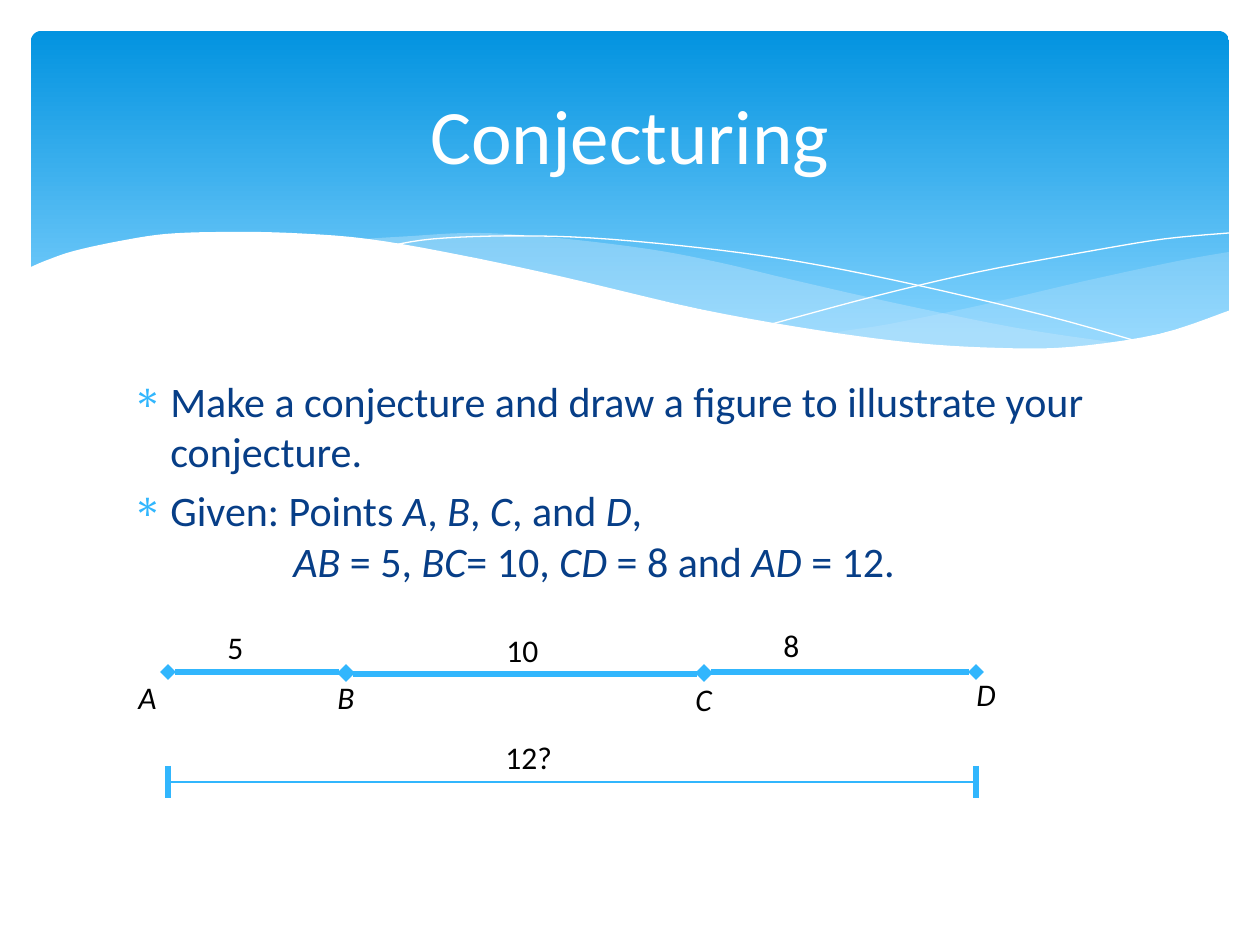
from lxml import etree
from pptx import Presentation
from pptx.dml.color import RGBColor
from pptx.enum.shapes import MSO_CONNECTOR, MSO_SHAPE
from pptx.enum.text import MSO_ANCHOR, PP_ALIGN
from pptx.oxml.ns import qn
from pptx.util import Pt

PX = 914400 / 126
ROUNDED, STRAIGHT = MSO_SHAPE.ROUNDED_RECTANGLE, MSO_CONNECTOR.STRAIGHT
MIDDLE, TOP = MSO_ANCHOR.MIDDLE, MSO_ANCHOR.TOP
CENTER, LEFT = PP_ALIGN.CENTER, PP_ALIGN.LEFT
FONT = "Calibri"
COLORS = {
    "sky_top": "0293E0", "sky_low": "83D3FE", "mist": "C6E7FC",
    "white": "FFFFFF", "accent": "31B6FD", "navy": "073E87", "black": "000000",
}

RIGHT_MIST = [(1198, 221), (1147, 230), (1054, 250), (951, 274), (859, 293), (802, 303),
              (857, 310), (923, 317), (995, 319), (1068, 314), (1138, 300), (1198, 280)]
LEFT_MIST = [(1094, 313), (986, 297), (859, 271), (762, 249), (686, 231), (617, 218),
             (526, 207), (448, 202), (382, 205), (329, 210), (400, 220), (478, 235),
             (535, 249), (637, 271), (726, 290), (826, 307), (911, 317), (986, 319),
             (1049, 318), (1094, 313)]
FALLING_LINE = [(358, 215), (402, 208), (474, 205), (560, 207), (670, 217),
                (770, 231), (885, 254), (1016, 285), (1112, 312)]
RISING_LINE = [(741, 293), (845, 265), (947, 241), (1060, 220), (1133, 208), (1198, 202)]
WAVE = [(1200, 279), (1128, 303), (1040, 316), (968, 317), (884, 312), (785, 299),
        (668, 278), (532, 246), (429, 224), (337, 208), (259, 202), (192, 201),
        (135, 203), (89, 210), (43, 220), (14, 230), (-2, 237)]
WAVE_BASE = [(-2, 384), (1200, 384)]


def emu(px):
    return round(px * PX)


def rgb(name):
    return RGBColor.from_string(COLORS[name])


def set_attrs(obj, values):
    for name, value in values.items():
        setattr(obj, name, value)


def smooth(knots, steps=5):
    padded = [knots[0], *knots, knots[-1]]
    points = []
    for a, b, c, d in zip(padded, padded[1:], padded[2:], padded[3:]):
        for i in range(steps):
            t = i / steps
            points.append(tuple(
                (2 * q + (r - p) * t + (2 * p - 5 * q + 4 * r - s) * t ** 2
                 + (3 * q - p - 3 * r + s) * t ** 3) / 2
                for p, q, r, s in zip(a, b, c, d)))
    return points + [knots[-1]]


def add_outline(slide, box, points, fill=None, alpha=None):
    x, y = box[:2]
    (start_x, start_y), *rest = [(emu(x + px), emu(y + py)) for px, py in points]
    builder = slide.shapes.build_freeform(start_x, start_y)
    builder.add_line_segments(rest, close=fill is not None)
    sp = builder.convert_to_shape()
    sp.shadow.inherit = False
    if fill is None:
        sp.fill.background()
        sp.line.color.rgb = rgb("white")
        sp.line.width = 0
        return
    sp.line.fill.background()
    sp.fill.solid()
    sp.fill.fore_color.rgb = rgb(fill)
    if alpha:
        color = sp.fill._xPr.find(qn("a:solidFill"))[0]
        etree.SubElement(color, qn("a:alpha"), val=str(alpha * 1000))


def add_box(slide, box, anchor=TOP):
    tf = slide.shapes.add_textbox(*map(emu, box)).text_frame
    set_attrs(tf, {"word_wrap": True, "vertical_anchor": anchor})
    return tf


def add_run(p, text, size, color, italic=False):
    r = p.add_run()
    r.text = text
    set_attrs(r.font, {"name": FONT, "size": Pt(size), "italic": italic})
    r.font.color.rgb = rgb(color)


def add_line(slide, start, end, width, diamonds=False):
    line = slide.shapes.add_connector(STRAIGHT, *map(emu, (*start, *end)))
    line.line.color.rgb = rgb("accent")
    line.line.width = Pt(width)
    if diamonds:
        for tag in ("a:headEnd", "a:tailEnd"):
            etree.SubElement(line.line._get_or_add_ln(), qn(tag), type="diamond")
    etree.SubElement(line._element.spPr, qn("a:effectLst"))


def add_banner(slide, box):
    x, y, w, h = box
    sp = slide.shapes.add_shape(ROUNDED, *map(emu, box))
    sp.adjustments[0] = 0.03
    sp.shadow.inherit = False
    sp.line.fill.background()
    sp.fill.gradient()
    sp.fill.gradient_angle = 270
    for stop, (position, color) in zip(sp.fill.gradient_stops, ((0, "sky_top"), (0.9, "sky_low"))):
        stop.position = position
        stop.color.rgb = rgb(color)
    add_outline(slide, box, smooth(RIGHT_MIST), "mist", 29)
    add_outline(slide, box, smooth(LEFT_MIST), "mist", 40)
    add_outline(slide, box, smooth(FALLING_LINE))
    add_outline(slide, box, smooth(RISING_LINE))
    add_outline(slide, box, smooth(WAVE) + WAVE_BASE, "white")
    p = add_box(slide, (x + 32, y + 16, w - 64, 173), MIDDLE).paragraphs[0]
    p.alignment = CENTER
    add_run(p, "Conjecturing", 44, "white")


def format_item(p, margin, bullet):
    p.alignment = LEFT
    p.space_before = Pt(5 if bullet else 0)
    pPr = p._p.get_or_add_pPr()
    pPr.set("marL", str(emu(margin)))
    pPr.set("indent", str(emu(-margin if bullet else 0)))
    if bullet:
        color = etree.SubElement(pPr, qn("a:buClr"))
        etree.SubElement(color, qn("a:srgbClr"), val=COLORS["accent"])
        etree.SubElement(pPr, qn("a:buFont"), typeface="Symbol")
        etree.SubElement(pPr, qn("a:buChar"), char="∗")


def add_body(slide, box):
    items = [
        (38, True, ["Make a conjecture and draw a figure to illustrate your conjecture."]),
        (38, True, ["Given: Points ", "A", ", ", "B", ", ", "C", ", and ", "D", ","]),
        (161, False, ["", "AB", " = 5, ", "BC", "= 10, ", "CD", " = 8 and ", "AD", " = 12."]),
    ]
    tf = add_box(slide, box)
    for i, (margin, bullet, texts) in enumerate(items):
        p = tf.add_paragraph() if i else tf.paragraphs[0]
        format_item(p, margin, bullet)
        for j, text in enumerate(texts):
            if text:
                add_run(p, text, 24, "navy", italic=j % 2 == 1)


def add_number_line(slide, box):
    x, y = box[:2]
    segments = [(42, 220, 52), (220, 578, 54), (578, 850, 52)]
    labels = [("A", 0, 52), ("B", 199, 52), ("5", 89, 2), ("C", 557, 54), ("10", 368, 5),
              ("D", 838, 49), ("8", 645, 0), ("12?", 367, 112)]
    for left, right, top in segments:
        add_line(slide, (x + left, y + top), (x + right, y + top), 3, diamonds=True)
    for end in (42, 850):
        add_line(slide, (x + end, y + 146), (x + end, y + 178), 3)
    add_line(slide, (x + 42, y + 162), (x + 850, y + 162), 0.75)
    for text, left, top in labels:
        p = add_box(slide, (x + left, y + top, 84, 50)).paragraphs[0]
        add_run(p, text, 18, "black", italic=text.isalpha())


def main():
    prs = Presentation()
    prs.slide_width, prs.slide_height = emu(1260), emu(945)
    slide = prs.slides.add_slide(prs.slide_layouts[6])
    add_banner(slide, (31, 31, 1198, 340))
    add_body(slide, (120, 369, 1020, 241))
    add_number_line(slide, (126, 620, 922, 178))
    prs.save("out.pptx")


if __name__ == "__main__":
    main()
